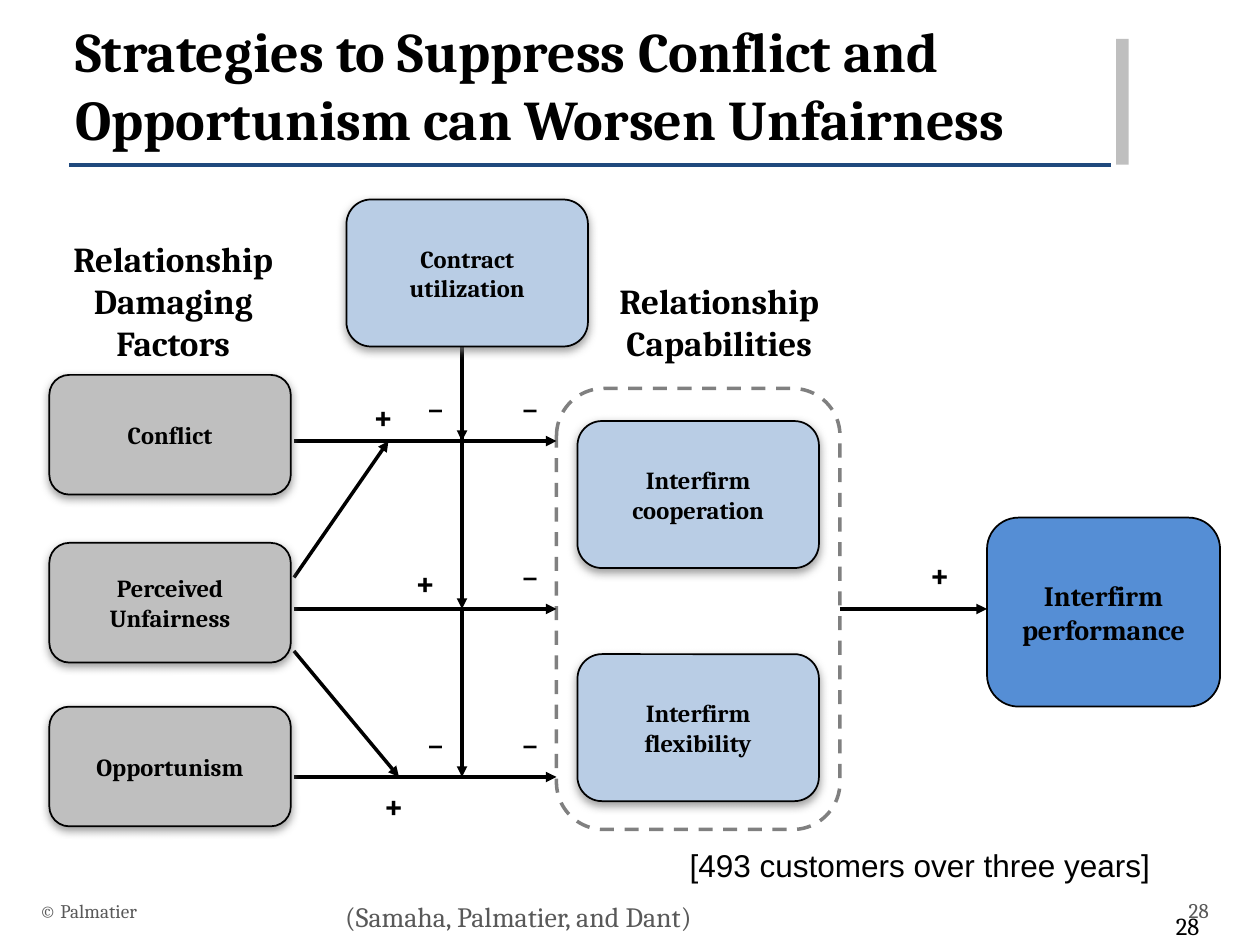
"""Build the slide on how strategies against conflict can worsen unfairness."""
import dataclasses

import lxml.etree
import pptx
import pptx.dml.color
import pptx.enum.dml
import pptx.enum.shapes
import pptx.enum.text
import pptx.oxml.ns
import pptx.util

COLS, ROWS = 120, 90
WIDTH, HEIGHT = pptx.util.Inches(10), pptx.util.Inches(7.5)
SHAPES = pptx.enum.shapes.MSO_SHAPE
ALIGN = pptx.enum.text.PP_ALIGN
ANCHOR = pptx.enum.text.MSO_ANCHOR


@dataclasses.dataclass(frozen=True)
class Theme:
    """Colours, fonts and type sizes of the slide."""
    serif: str = "Cambria"
    sans: str = "Arial"
    ink: str = "000000"
    muted: str = "595959"
    rule: str = "1F497D"
    grey: str = "BFBFBF"
    pale: str = "B9CDE5"
    blue: str = "558ED5"
    dash: str = "808080"
    title: int = 32
    heading: int = 20
    note: int = 18
    source: int = 16
    box: int = 14
    number: int = 12
    footer: int = 11


T = Theme()


def rgb(color):
    """Return the colour object for a hex string."""
    return pptx.dml.color.RGBColor.from_string(color)


def x(col):
    """Return the distance of a grid column from the left edge."""
    return round(WIDTH * col / COLS)


def y(row):
    """Return the distance of a grid row from the top edge."""
    return round(HEIGHT * row / ROWS)


def child(parent, tag, **attrs):
    """Append a drawing element with the given attributes."""
    return lxml.etree.SubElement(parent, pptx.oxml.ns.qn(tag), attrs)


def set_text(sp, text, *, size, font=T.serif, color=T.ink, bold=False,
             align=ALIGN.LEFT, anchor=ANCHOR.MIDDLE):
    """Write formatted text into a shape."""
    tf = sp.text_frame
    tf.word_wrap = True
    tf.vertical_anchor = anchor
    p = tf.paragraphs[0]
    p.alignment = align
    r = p.add_run()
    r.text = text
    r.font.size = pptx.util.Pt(size)
    r.font.name = font
    r.font.bold = bold
    r.font.color.rgb = rgb(color)


def add_text(s, text, col, row, cols, rows, **fmt):
    """Add a text box on the grid."""
    sp = s.shapes.add_textbox(x(col), y(row), x(cols), y(rows))
    set_text(sp, text, **fmt)
    return sp


def add_label(s, text, col, row, cols=7, rows=5.25):
    """Add a bold centred label that sits at the top of its box."""
    sp = add_text(s, text, col, row, cols, rows, size=T.heading, bold=True,
                  align=ALIGN.CENTER, anchor=ANCHOR.TOP)
    sp.text_frame.auto_size = pptx.enum.text.MSO_AUTO_SIZE.SHAPE_TO_FIT_TEXT


def add_shape(s, kind, col, row, cols, rows, fill=None, line=None, weight=1):
    """Add a preset shape on the grid with plain fill and outline."""
    sp = s.shapes.add_shape(kind, x(col), y(row), x(cols), y(rows))
    sp.shadow.inherit = False
    if fill:
        sp.fill.solid()
        sp.fill.fore_color.rgb = rgb(fill)
    else:
        sp.fill.background()
    if line:
        sp.line.color.rgb = rgb(line)
        sp.line.width = pptx.util.Pt(weight)
    else:
        sp.line.fill.background()
    return sp


def add_shadow(sp):
    """Give a shape a soft grey shadow straight below it."""
    effects = sp.element.spPr.find(pptx.oxml.ns.qn("a:effectLst"))
    shadow = child(effects, "a:outerShdw", blurRad=str(pptx.util.Pt(5)),
                   dist=str(pptx.util.Pt(2)), dir="5400000", rotWithShape="0")
    child(child(shadow, "a:srgbClr", val=T.dash), "a:alpha", val="75000")


def add_box(s, text, col, row, cols, rows, fill, size=T.box, shadow=True):
    """Add a rounded box that names one construct of the model."""
    sp = add_shape(s, SHAPES.ROUNDED_RECTANGLE, col, row, cols, rows, fill, T.ink)
    set_text(sp, text, size=size, bold=True, align=ALIGN.CENTER)
    if shadow:
        add_shadow(sp)
    return sp


def add_line(s, start, end, color=T.ink, arrow=True):
    """Add a straight line between two grid points."""
    cxn = s.shapes.add_connector(pptx.enum.shapes.MSO_CONNECTOR.STRAIGHT,
                                 x(start[0]), y(start[1]), x(end[0]), y(end[1]))
    cxn.line.color.rgb = rgb(color)
    cxn.line.width = pptx.util.Pt(2)
    spPr = cxn.element.spPr
    if arrow:
        child(spPr.find(pptx.oxml.ns.qn("a:ln")), "a:tailEnd", type="triangle")
    child(spPr, "a:effectLst")
    return cxn


def add_frame(s):
    """Add the title, its rule and bar, and the footer."""
    add_line(s, (6.6, 15.7), (105.8, 15.7), T.rule, arrow=False)
    add_shape(s, SHAPES.RECTANGLE, 106.3, 3.7, 1.2, 12, T.grey)
    title = "Strategies to Suppress Conflict and Opportunism can Worsen Unfairness"
    add_text(s, title, 6, 0.5, 101, 15, size=T.title, bold=True)
    add_text(s, "28", 107, 86.4, 8.4, 3.6, size=T.box, align=ALIGN.RIGHT)
    add_text(s, "(Samaha, Palmatier, and Dant)", 31.7, 85.1, 41.8, 4.4,
             size=T.source, color=T.muted, anchor=ANCHOR.TOP)
    add_text(s, "[493 customers over three years]", 64.5, 80, 55, 4.8,
             size=T.note, font=T.sans, anchor=ANCHOR.TOP)
    add_text(s, "© Palmatier", 2.6, 84.3, 80.4, 4.8, size=T.footer, color=T.muted)
    add_text(s, "28", 109, 84.3, 7.3, 4.8, size=T.number, color=T.muted,
             align=ALIGN.RIGHT)


def add_arrows(s, group):
    """Add the effects between factors, capabilities and performance."""
    conflict, unfairness, opportunism = 42, 58, 74
    for row in (conflict, unfairness, opportunism):
        cxn = add_line(s, (28, row), (53, row))
        if row == unfairness:
            cxn.end_connect(group, 1)
    for start, end in ((33, conflict), (40, unfairness), (unfairness, opportunism)):
        add_line(s, (44, start), (44, end))
    add_line(s, (28, 55), (37, conflict))
    add_line(s, (28, 62), (38, opportunism))
    add_line(s, (80, unfairness), (94, unfairness)).begin_connect(group, 3)


def add_labels(s):
    """Add the group headings and the signs of the effects."""
    add_label(s, "Relationship Damaging Factors", 3, 22, 27, 13.3)
    add_label(s, "Relationship Capabilities", 55, 26, 27, 9.3)
    for col, row in ((38, 35), (47, 35), (47, 51), (38, 67), (47, 67)):
        add_label(s, "_", col, row)
    for col, row in ((33, 37), (37, 52.8), (34, 74), (86, 52)):
        add_label(s, "+", col, row)


def add_boxes(s):
    """Add the constructs of the model."""
    for text, row in (("Conflict", 35.7), ("Perceived Unfairness", 51.7),
                      ("Opportunism", 67.3)):
        add_box(s, text, 4.7, row, 23, 11.4, T.grey)
    for text, col, row in (("Contract utilization", 33, 19),
                           ("Interfirm cooperation", 55, 40.1),
                           ("Interfirm flexibility", 55, 62.3)):
        add_box(s, text, col, row, 23, 14, T.pale)
    add_box(s, "Interfirm performance", 94, 49.3, 22.2, 18, T.blue,
            size=T.source, shadow=False)


def main():
    """Build and save the slide."""
    prs = pptx.Presentation()
    prs.slide_width, prs.slide_height = WIDTH, HEIGHT
    s = prs.slides.add_slide(prs.slide_layouts[6])
    add_frame(s)
    group = add_shape(s, SHAPES.ROUNDED_RECTANGLE, 53, 37, 27, 42,
                      line=T.dash, weight=2)
    group.line.dash_style = pptx.enum.dml.MSO_LINE.DASH
    add_arrows(s, group)
    add_labels(s)
    add_boxes(s)
    prs.save("out.pptx")


if __name__ == "__main__":
    main()
